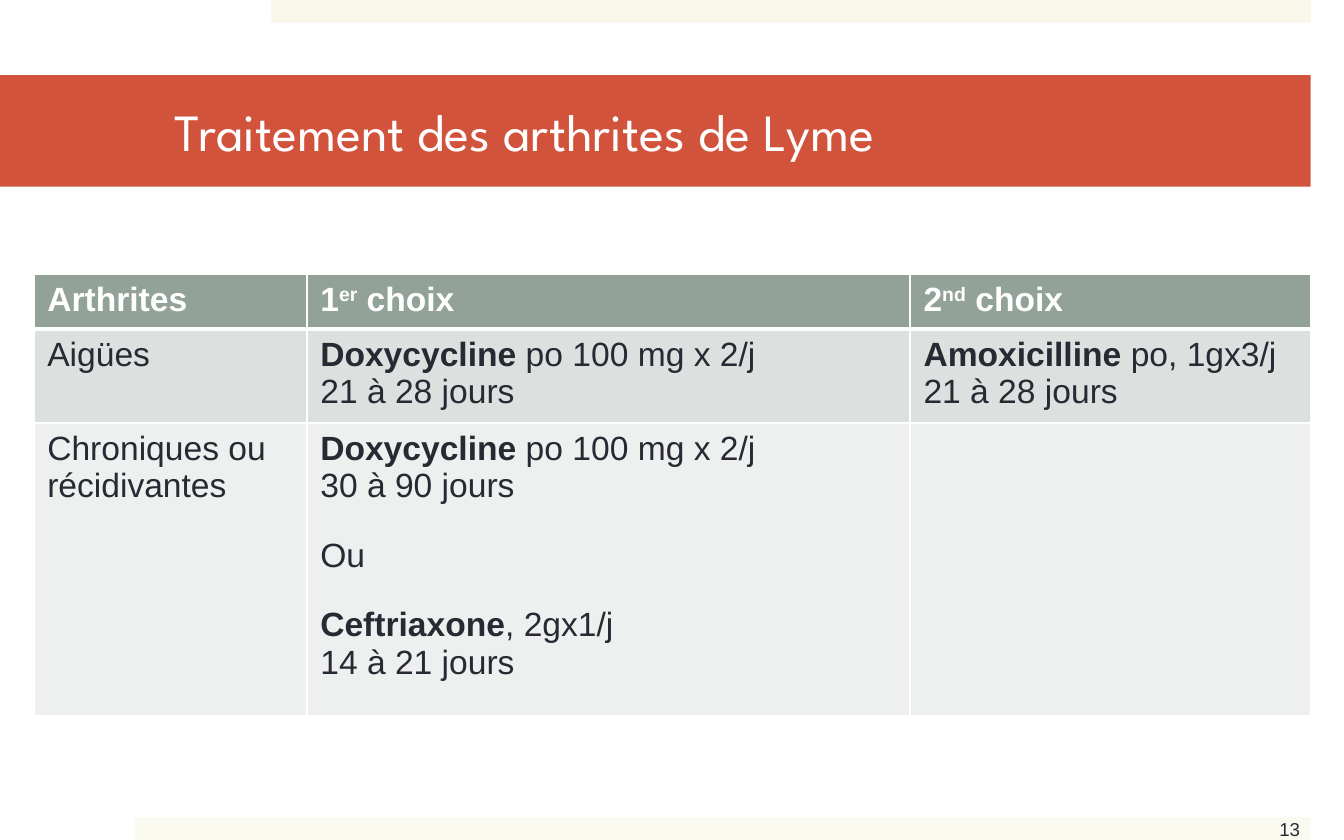
from dataclasses import dataclass

from lxml import etree
from pptx import Presentation
from pptx.dml.color import RGBColor
from pptx.enum.shapes import MSO_SHAPE
from pptx.enum.text import MSO_ANCHOR, PP_ALIGN
from pptx.oxml.ns import qn
from pptx.util import Cm, Pt

RECTANGLE = MSO_SHAPE.RECTANGLE
MIDDLE = MSO_ANCHOR.MIDDLE
LEFT = PP_ALIGN.LEFT


@dataclass(frozen=True)
class Theme:
    """Colours, fonts and type sizes of the slide."""
    white: str = "FFFFFF"
    ink: str = "292934"
    accent: str = "D2533C"
    top_band: str = "F8F7EA"
    bottom_band: str = "FAFAF1"
    header: str = "93A299"
    rows: tuple = ("DCE0DE", "EEF0EF")
    title_font: str = "League Spartan"
    body_font: str = "Arial"
    title_size: int = 28
    body_size: int = 18
    number_size: int = 10
    paragraph_gap: int = 17


THEME = Theme()
SLIDE_WIDTH, SLIDE_HEIGHT = 25.4, 15.88
RIGHT_EDGE = 24.77
COLUMN_WIDTHS = (5.16, 11.4, 7.57)
ROW_HEIGHTS = (1.04, 1.65, 5.54)

BOLD, PLAIN, RAISED = "bold", "plain", "raised"
TREATMENTS = [
    [
        [[("Arthrites", BOLD)]],
        [[("1", BOLD), ("er", RAISED), (" choix", BOLD)]],
        [[("2", BOLD), ("nd", RAISED), (" choix", BOLD)]],
    ],
    [
        [[("Aigües", PLAIN)]],
        [[("Doxycycline", BOLD), (" po 100 mg x 2/j\n21 à 28 jours", PLAIN)]],
        [[("Amoxicilline", BOLD), (" po, 1gx3/j\n21 à 28 jours", PLAIN)]],
    ],
    [
        [[("Chroniques ou récidivantes", PLAIN)]],
        [
            [("Doxycycline", BOLD), (" po 100 mg x 2/j\n30 à 90 jours", PLAIN)],
            [("Ou", PLAIN)],
            [("Ceftriaxone", BOLD), (", 2gx1/j\n14 à 21 jours", PLAIN)],
        ],
        [],
    ],
]


def set_all(target, formats):
    """Set each named attribute of the target."""
    for name, value in formats.items():
        setattr(target, name, value)


def add_run(paragraph, text, font_name, size, color, style=PLAIN):
    """Add text to a paragraph, breaking lines where the text does."""
    for index, line in enumerate(text.split("\n")):
        if index:
            paragraph.add_line_break()
        run = paragraph.add_run()
        run.text = line
        set_all(run.font, {"name": font_name, "size": Pt(size), "bold": style != PLAIN})
        run.font.color.rgb = RGBColor.from_string(color)
        if style == RAISED:
            run.font._element.set("baseline", "30000")


def add_band(slide, box, color):
    """Draw a plain filled rectangle in the box."""
    band = slide.shapes.add_shape(RECTANGLE, *map(Cm, box))
    band.shadow.inherit = False
    band.fill.solid()
    band.fill.fore_color.rgb = RGBColor.from_string(color)
    band.line.fill.background()
    return band


def add_title(slide, box, text):
    """Draw the title on its coloured bar."""
    frame = add_band(slide, box, THEME.accent).text_frame
    set_all(frame, {
        "word_wrap": True, "vertical_anchor": MIDDLE,
        "margin_left": Cm(3.3), "margin_right": Cm(0.76),
        "margin_top": Cm(0.13), "margin_bottom": Cm(0.13),
    })
    heading = frame.paragraphs[0]
    heading.alignment = LEFT
    add_run(heading, text, THEME.title_font, THEME.title_size, THEME.white)


def add_page_number(slide, box, text):
    """Write the page number in the box."""
    frame = slide.shapes.add_textbox(*map(Cm, box)).text_frame
    frame.word_wrap = True
    add_run(frame.paragraphs[0], text, THEME.body_font, THEME.number_size, THEME.ink)


def set_borders(cell, top, bottom):
    """Give the cell white borders, with top and bottom widths in points."""
    properties = cell._tc.get_or_add_tcPr()
    for side, width in {"lnL": 1, "lnR": 1, "lnT": top, "lnB": bottom}.items():
        border = etree.SubElement(properties, qn(f"a:{side}"), w=str(Pt(width)))
        paint = etree.SubElement(border, qn("a:solidFill"))
        etree.SubElement(paint, qn("a:srgbClr"), val=THEME.white)


def fill_cell(cell, paragraphs, fill, color):
    """Colour a cell and write its paragraphs."""
    cell.fill.solid()
    cell.fill.fore_color.rgb = RGBColor.from_string(fill)
    frame = cell.text_frame
    for index, runs in enumerate(paragraphs):
        paragraph = frame.add_paragraph() if index else frame.paragraphs[0]
        paragraph.space_before = Pt(THEME.paragraph_gap if index else 0)
        for text, style in runs:
            add_run(paragraph, text, THEME.body_font, THEME.body_size, color, style)


def add_treatments(slide, left, top):
    """Draw the treatment table from its top left corner."""
    table = slide.shapes.add_table(
        len(ROW_HEIGHTS), len(COLUMN_WIDTHS), Cm(left), Cm(top),
        Cm(sum(COLUMN_WIDTHS)), Cm(sum(ROW_HEIGHTS))).table
    for column, width in zip(table.columns, COLUMN_WIDTHS):
        column.width = Cm(width)
    fills = (THEME.header, *THEME.rows)
    for index, (row, height, contents) in enumerate(zip(table.rows, ROW_HEIGHTS, TREATMENTS)):
        row.height = Cm(height)
        color = THEME.ink if index else THEME.white
        for cell, paragraphs in zip(row.cells, contents):
            set_borders(cell, 3 if index == 1 else 1, 3 if index == 0 else 1)
            fill_cell(cell, paragraphs, fills[index], color)


def main():
    """Build and save the slide."""
    deck = Presentation()
    set_all(deck, {"slide_width": Cm(SLIDE_WIDTH), "slide_height": Cm(SLIDE_HEIGHT)})
    slide = deck.slides.add_slide(deck.slide_layouts[6])
    band_height = 0.43
    for left, top, color in ((5.13, 0, THEME.top_band),
                             (2.54, SLIDE_HEIGHT - band_height, THEME.bottom_band)):
        add_band(slide, (left, top, RIGHT_EDGE - left, band_height), color)
    add_page_number(slide, (23.93, 15.34, 1.04, 0.71), "13")
    add_title(slide, (0, 1.42, RIGHT_EDGE, 2.11), "Traitement des arthrites de Lyme")
    add_treatments(slide, 0.64, 5.18)
    deck.save("out.pptx")


if __name__ == "__main__":
    main()
